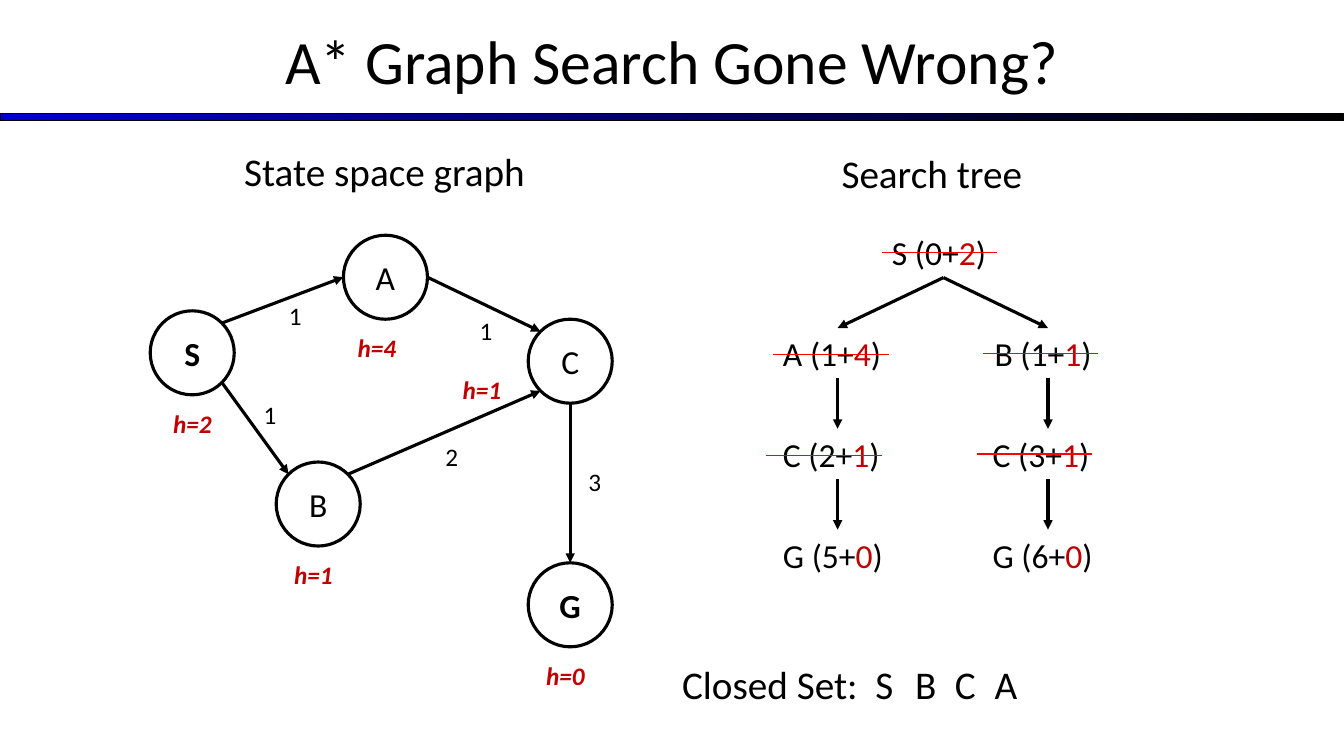
from collections import namedtuple

from lxml import etree
from pptx import Presentation
from pptx.dml.color import RGBColor
from pptx.enum.shapes import MSO_CONNECTOR as Connector, MSO_SHAPE as Shape
from pptx.enum.text import MSO_ANCHOR as Anchor, PP_ALIGN as Align
from pptx.oxml.ns import qn
from pptx.util import Pt

COLORS = {"ink": "000000", "paper": "FFFFFF", "heuristic": "C00000",
          "strike": "FF0000", "rule": "0000CC"}
FONT = "Calibri"
NODE = 60
DIAGONAL = 0.5 ** 0.5
Box = namedtuple("Box", "left top width height")

# Node: position, bold, heuristic value, offset of its label
NODES = {
    "S": ((0, 120), True, 2, (9.3, 66)),
    "A": ((138, 66), False, 4, (3, 66)),
    "B": ((90, 228), False, 1, (5.7, 66)),
    "C": ((270, 126), False, 1, (-54, 35.5)),
    "G": ((270, 300), True, 0, (5.7, 66)),
}
SIDES = {
    "top": (0, -1), "bottom": (0, 1), "left": (-1, 0), "right": (1, 0),
    "top left": (-DIAGONAL, -DIAGONAL), "top right": (DIAGONAL, -DIAGONAL),
    "bottom left": (-DIAGONAL, DIAGONAL), "bottom right": (DIAGONAL, DIAGONAL),
}
# Edge: start, side, end, side, cost, position of the cost
EDGES = [
    ("S", "top right", "A", "left", 1, (92, 109)),
    ("S", "bottom right", "B", "top left", 1, (74, 180)),
    ("A", "right", "C", "top left", 1, (228.2, 119.8)),
    ("B", "top right", "C", "bottom left", 2, (203.7, 209.8)),
    ("C", "bottom", "G", "top", 3, (306, 227.8)),
]
# Tree entry: row, left, width, state, path cost, heuristic, strike (left, drop)
TREE = [
    (0, 82.8, 88.6, "S", 0, 2, (82.8, 18)),
    (1, 5, 93, "A", 1, 4, (5, 18.8)),
    (1, 156.2, 91, "B", 1, 1, (154.8, 18.4)),
    (2, 5, 93, "C", 2, 1, (0, 19)),
    (2, 154.8, 93, "C", 3, 1, (150.5, 18)),
    (3, 5, 94.3, "G", 5, 0, None),
    (3, 154.8, 94.3, "G", 6, 0, None),
]


def rgb(name):
    return RGBColor.from_string(COLORS[name])


def write(frame, spans, size, align=Align.LEFT, anchor=Anchor.TOP, **extra):
    """Fill a text frame with one paragraph of (text, colour name) spans."""
    layout = {"word_wrap": False, "vertical_anchor": anchor,
              "margin_left": Pt(7.2), "margin_right": Pt(7.2),
              "margin_top": Pt(3.6), "margin_bottom": Pt(3.6)}
    for key, value in layout.items():
        setattr(frame, key, value)
    para = frame.paragraphs[0]
    para.alignment = align
    for text, color in spans:
        span = para.add_run()
        span.text = text
        span.font.color.rgb = rgb(color)
        for key, value in {"name": FONT, "size": Pt(size), **extra}.items():
            setattr(span.font, key, value)


def add_label(page, box, spans, size, **extra):
    label = page.shapes.add_textbox(*map(Pt, box))
    write(label.text_frame, spans, size, **extra)


def add_line(page, start, end, color="ink", weight=2.25, arrow=True):
    line = page.shapes.add_connector(Connector.STRAIGHT, *map(Pt, (*start, *end)))
    line.line.color.rgb = rgb(color)
    line.line.width = Pt(weight)
    if arrow:
        etree.SubElement(line.line._get_or_add_ln(), qn("a:tailEnd"), type="triangle")
    etree.SubElement(line._element.spPr, qn("a:effectLst"))


def add_title(page, box):
    rule = page.shapes.add_shape(
        Shape.RECTANGLE, *map(Pt, (box.left, box.top + 83.5, box.width, 5)))
    rule.shadow.inherit = False
    rule.fill.gradient()
    rule.fill.gradient_angle = 0
    for stop, color, position in zip(rule.fill.gradient_stops, ("rule", "ink"), (0, 1)):
        stop.color.rgb = rgb(color)
        stop.position = position
    rule.line.color.rgb = rgb("ink")
    rule.line.width = Pt(0.75)
    add_label(page, box, [("A* Graph Search Gone Wrong?", "ink")], 44,
              align=Align.CENTER, anchor=Anchor.MIDDLE)


def add_state_graph(page, box):
    def place(x, y):
        return box.left + x, box.top + y

    def rim(name, side):
        return place(*(corner + NODE / 2 * (1 + step)
                       for corner, step in zip(NODES[name][0], SIDES[side])))

    add_label(page, (*place(60, 0), 233, 41), [("State space graph", "ink")], 28)
    for name, ((x, y), bold, heuristic, (dx, dy)) in NODES.items():
        node = page.shapes.add_shape(Shape.OVAL, *map(Pt, (*place(x, y), NODE, NODE)))
        node.shadow.inherit = False
        node.fill.solid()
        node.fill.fore_color.rgb = rgb("paper")
        node.line.color.rgb = rgb("ink")
        node.line.width = Pt(2.25)
        write(node.text_frame, [(name, "ink")], 24, align=Align.CENTER,
              anchor=Anchor.MIDDLE, bold=bold)
        add_label(page, (*place(x + dx, y + dy), 49, 29),
                  [(f"h={heuristic}", "heuristic")], 18, bold=True, italic=True)
    for start, start_side, end, end_side, cost, spot in EDGES:
        add_line(page, rim(start, start_side), rim(end, end_side))
        add_label(page, (*place(*spot), 23.8, 29), [(str(cost), "ink")], 18)


def add_search_tree(page, box):
    def place(x, y):
        return box.left + x, box.top + y

    first_row, row_step, row_height = 59.3, 72, 36
    branches = (51.1, 201.4)
    add_label(page, (*place(46.8, 0), 151, 41), [("Search tree", "ink")], 28)
    for row in range(3):
        top = first_row + row * row_step
        for branch in branches:
            start = 126.7 if row == 0 else branch
            add_line(page, place(start, top + row_height), place(branch, top + row_step))
    for row, left, width, state, cost, heuristic, strike in TREE:
        top = first_row + row * row_step
        add_label(page, (*place(left, top), width, row_height),
                  [(f"{state} ({cost}+", "ink"), (str(heuristic), "heuristic"),
                   (")", "ink")], 24)
        if strike:
            x, drop = strike
            add_line(page, place(x, top + drop), place(x + 82.5, top + drop),
                     "strike", 0.75, arrow=False)


def add_closed_set(page, box):
    add_label(page, (box.left, box.top, 152.6, box.height), [("Closed Set:", "ink")], 28)
    for index, (state, width) in enumerate(zip("SBCA", (29.5, 31.7, 34.6, 36.7))):
        add_label(page, (box.left + 138 + 28.4 * index, box.top, width, box.height),
                  [(state, "ink")], 28)


def main():
    deck = Presentation()
    deck.slide_width, deck.slide_height = Pt(960), Pt(540)
    page = deck.slides.add_slide(deck.slide_layouts[6])
    add_title(page, Box(0, -2.2, 960, 90))
    add_state_graph(page, Box(107.3, 102, 330, 400))
    add_search_tree(page, Box(547.2, 103, 250, 320))
    add_closed_set(page, Box(480.2, 468, 260, 41))
    deck.save("out.pptx")


if __name__ == "__main__":
    main()
